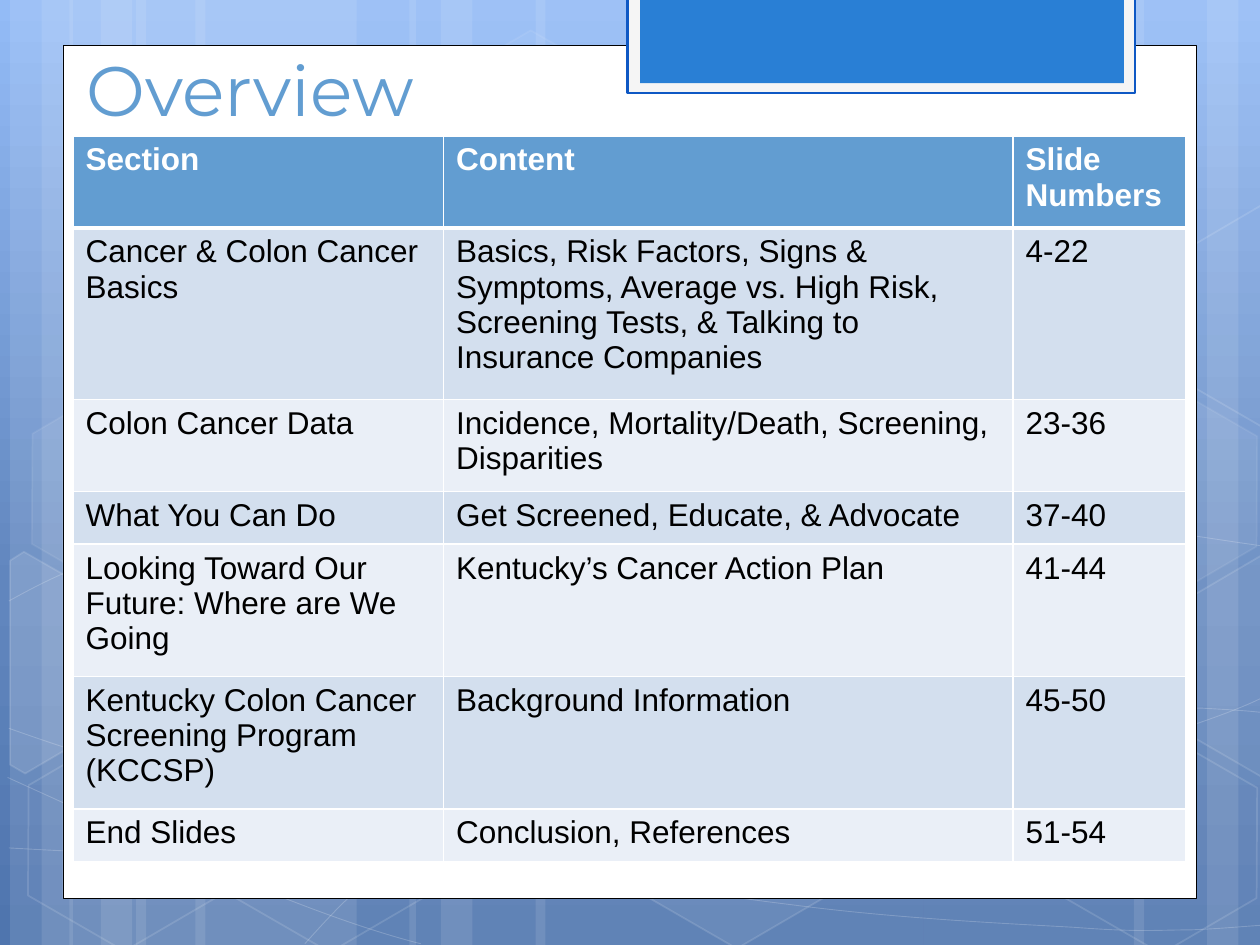
from copy import deepcopy

from lxml.etree import SubElement
from pptx import Presentation
from pptx.dml.color import RGBColor
from pptx.enum.shapes import MSO_SHAPE as Shape
from pptx.enum.text import MSO_ANCHOR as Anchor, PP_ALIGN as Align
from pptx.oxml.ns import qn
from pptx.util import Inches, Pt

WIDTH, HEIGHT = 10, 7.5
COLORS = {
    "white": "FFFFFF", "black": "000000", "accent": "629DD1",
    "sky": "93BBF6", "mid": "6186BE", "deep": "4F75AE",
    "tab": "F5F5F5", "tab_line": "0E58C4", "tab_core": "297FD5",
    "band": "D3DFEE", "band_light": "EAEFF7",
}
BACKGROUND = [(0, "sky"), (0.62, "mid"), (1, "deep")]

# Left edge and width of each full-height stripe
STRIPES = [
    (1.08, 1.75), (0.08, 0.5), (0.33, 0.83), (1.55, 1.75), (0.55, 0.5), (0.8, 0.83),
    (7.33, 1.75), (9.58, 0.5), (9, 0.83), (4.25, 3.08), (3.25, 0.5), (3.5, 0.83),
]
# Start point, then line segments (end) and Bezier segments (two handles, end)
CURVES = [
    [(0.07, 6.73), (0.61, 6.76, 1.15, 6.79, 1.9, 6.78), (2.65, 6.77, 3.58, 6.75, 4.58, 6.65),
     (5.58, 6.55, 7, 6.36, 7.92, 6.17), (8.83, 5.98, 9.77, 5.68, 10.07, 5.51)],
    [(0.07, 4.77), (0.36, 4.61, 0.65, 4.46, 1.21, 4.31), (1.78, 4.16, 2.59, 3.94, 3.47, 3.87),
     (4.36, 3.8, 5.44, 3.79, 6.54, 3.87), (7.64, 3.95, 9.47, 4.26, 10.07, 4.34)],
    [(0.06, 6.17), (1.27, 6.72, 2.47, 7.27, 3.34, 7.49)],
    [(0.07, 5.78), (0.38, 5.89, 0.7, 6, 1.28, 6.16), (1.86, 6.31, 2.73, 6.56, 3.57, 6.73),
     (4.4, 6.9, 5.45, 7.08, 6.28, 7.18), (7.11, 7.29, 8, 7.33, 8.53, 7.36),
     (9.05, 7.4, 9.19, 7.38, 9.45, 7.38), (9.71, 7.37, 9.89, 7.35, 10.07, 7.34)],
    [(2.42, 7.49), (2.6, 7.29, 2.78, 7.09, 3.02, 6.91), (3.26, 6.73, 3.6, 6.53, 3.88, 6.39),
     (4.16, 6.25, 4.33, 6.19, 4.7, 6.09), (5.06, 5.99, 5.73, 5.85, 6.08, 5.78),
     (6.44, 5.71, 6.49, 5.71, 6.8, 5.69), (7.11, 5.66, 7.6, 5.63, 7.94, 5.62),
     (8.29, 5.61, 8.86, 5.62, 8.86, 5.62), (9.53, 5.62),
     (9.71, 5.63, 9.88, 5.64, 9.97, 5.65), (10.06, 5.66, 10.03, 5.65, 10.06, 5.66)],
]
# Left, top, fill opacity and line opacity (percent)
HEXAGONS = [
    (3.34, 0.36, 4, 8), (4.97, 5.89, 6, 12), (0.11, 5.91, 0, 12), (0.14, 3.12, 7, 8),
    (1.74, 5.92, 0, 12), (7.53, 4.53, 10, 12), (8.34, 5.93, 0, 12), (8.34, 3.14, 7, 8),
]
# Hexagons cut by the slide's edge: fill opacity and corners
CUT_HEXAGONS = [
    (10, [(0.08, 4.45), (0.19, 4.38), (0.96, 4.82), (0.95, 5.7), (0.2, 6.14), (0.08, 6.07)]),
    (4, [(9.26, 4.85), (10.01, 4.41), (10.09, 4.46), (10.09, 6.13), (10.02, 6.17), (9.26, 5.73)]),
    (0, [(9.26, 2.07), (10.01, 1.63), (10.1, 1.68), (10.09, 3.35), (10.02, 3.39), (9.26, 2.95)]),
]

COLUMNS = [2.94, 4.52, 1.37]
ROWS = [0.73, 1.36, 0.73, 0.42, 1.05, 1.05, 0.42]
CONTENT = [
    ("Section", "Content", "Slide Numbers"),
    ("Cancer & Colon Cancer Basics",
     "Basics, Risk Factors, Signs & Symptoms, Average vs. High Risk, "
     "Screening Tests, & Talking to Insurance Companies", "4-22"),
    ("Colon Cancer Data", "Incidence, Mortality/Death, Screening, Disparities", "23-36"),
    ("What You Can Do", "Get Screened, Educate, & Advocate", "37-40"),
    ("Looking Toward Our Future: Where are We Going", "Kentucky’s Cancer Action Plan", "41-44"),
    ("Kentucky Colon Cancer Screening Program (KCCSP)", "Background Information", "45-50"),
    ("End Slides", "Conclusion, References", "51-54"),
]


def rgb(name):
    return RGBColor.from_string(COLORS[name])


def paint(fill, color, holder, opacity=100):
    """Fill solidly; holder is the XML element that owns the fill."""
    fill.solid()
    fill.fore_color.rgb = rgb(color)
    if opacity < 100:
        tint = holder.find(qn("a:solidFill") + "/" + qn("a:srgbClr"))
        SubElement(tint, qn("a:alpha")).set("val", str(opacity * 1000))


def style(shape, fill=None, opacity=100, line=None, weight=1, line_opacity=100):
    shape.shadow.inherit = False
    properties = shape._element.spPr
    if fill and opacity:
        paint(shape.fill, fill, properties, opacity)
    else:
        shape.fill.background()
    if line:
        shape.line.width = Pt(weight)
        paint(shape.line.fill, line, properties.find(qn("a:ln")), line_opacity)
    else:
        shape.line.fill.background()


def add_box(page, kind, left, top, width, height, **look):
    box = page.shapes.add_shape(kind, *map(Inches, (left, top, width, height)))
    style(box, **look)
    return box


def add_outline(page, points, closed, **look):
    start, *rest = [(Inches(x), Inches(y)) for x, y in points]
    builder = page.shapes.build_freeform(*start)
    builder.add_line_segments(rest, close=closed)
    outline = builder.convert_to_shape()
    style(outline, **look)
    return outline


def add_curve(page, curve, **look):
    """Draw through handles and ends, then turn each triple into one Bezier segment."""
    points = [pair for part in curve for pair in zip(part[::2], part[1::2])]
    outline = add_outline(page, points, False, **look)
    segments = iter(outline._element.findall(".//" + qn("a:lnTo")))
    for part in curve[1:]:
        first = next(segments)
        if len(part) == 6:
            first.tag = qn("a:cubicBezTo")
            for _ in range(2):
                merged = next(segments)
                first.append(merged[0])
                merged.getparent().remove(merged)


def add_background(page):
    fill = page.background.fill
    fill.gradient()
    fill.gradient_angle = 270
    stops = page._element.find(".//" + qn("a:gsLst"))
    stops.append(deepcopy(stops[-1]))
    for stop, (position, color) in zip(fill.gradient_stops, BACKGROUND):
        stop.position = position
        stop.color.rgb = rgb(color)


def add_decoration(page):
    for left, width in STRIPES:
        add_box(page, Shape.RECTANGLE, left, 0, width, HEIGHT, fill="white", opacity=10)
    for curve in CURVES:
        add_curve(page, curve, line="white", weight=0.5, line_opacity=20)
    for left, top, opacity, line_opacity in HEXAGONS:
        hexagon = add_box(page, Shape.HEXAGON, left, top, 1.75, 1.52, fill="white",
                          opacity=opacity, line="white", line_opacity=line_opacity)
        hexagon.adjustments[0] = 0.285
        hexagon.rotation = 30
    for opacity, corners in CUT_HEXAGONS:
        add_outline(page, corners, True, fill="white", opacity=opacity,
                    line="white", line_opacity=12)


def add_panel(page):
    add_box(page, Shape.RECTANGLE, 0.5, 0.36, WIDTH - 1, 6.77,
            fill="white", line="black", weight=0.5)
    add_box(page, Shape.RECTANGLE, 4.98, -0.02, 4.03, 0.76,
            fill="tab", line="tab_line", weight=1.25)
    add_box(page, Shape.RECTANGLE, 5.08, -0.02, 3.84, 0.68, fill="tab_core")


def write(frame, text, font, size, color, bold=False):
    para = frame.paragraphs[0]
    para.alignment = Align.LEFT
    span = para.add_run()
    span.text = text
    span.font.name, span.font.size, span.font.bold = font, Pt(size), bold
    span.font.color.rgb = rgb(color)


def place_title(page, text):
    title = page.shapes.title
    title.left, title.top, title.width, title.height = map(Inches, (0.59, 0.26, 7.68, 0.83))
    title.text_frame.vertical_anchor = Anchor.BOTTOM
    write(title.text_frame, text, "Montserrat", 40, "accent")
    page.shapes._spTree.append(title._element)


def add_borders(cell, **weights):
    properties = cell._tc.get_or_add_tcPr()
    for side, weight in weights.items():
        border = SubElement(properties, qn("a:ln" + side), w=str(Pt(weight)))
        solid = SubElement(border, qn("a:solidFill"))
        SubElement(solid, qn("a:srgbClr"), val=COLORS["white"])


def add_overview_table(page):
    frame = page.shapes.add_table(len(ROWS), len(COLUMNS), Inches(0.58), Inches(1.08),
                                  Inches(sum(COLUMNS)), Inches(sum(ROWS)))
    table = frame.table
    for column, width in zip(table.columns, COLUMNS):
        column.width = Inches(width)
    for index, (row, height, texts) in enumerate(zip(table.rows, ROWS, CONTENT)):
        row.height = Inches(height)
        header = index == 0
        fill = "accent" if header else ("band_light", "band")[index % 2]
        for cell, text in zip(row.cells, texts):
            add_borders(cell, L=1, R=1, T=3 if index == 1 else 1, B=3 if header else 1)
            paint(cell.fill, fill, cell._tc.tcPr)
            write(cell.text_frame, text, "Arial", 18, "white" if header else "black", header)


def main():
    deck = Presentation()
    deck.slide_width, deck.slide_height = Inches(WIDTH), Inches(HEIGHT)
    page = deck.slides.add_slide(deck.slide_layouts[5])
    add_background(page)
    add_decoration(page)
    add_panel(page)
    place_title(page, "Overview")
    add_overview_table(page)
    deck.save("out.pptx")


if __name__ == "__main__":
    main()
